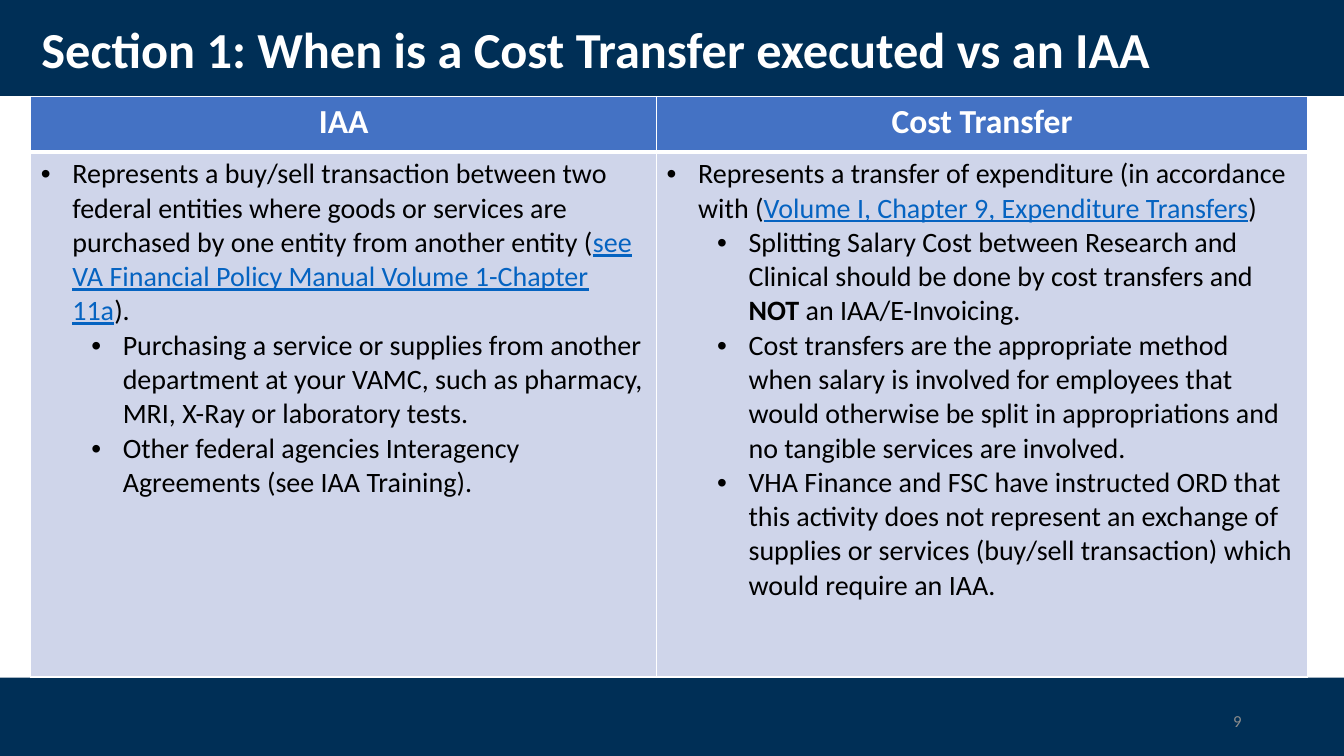
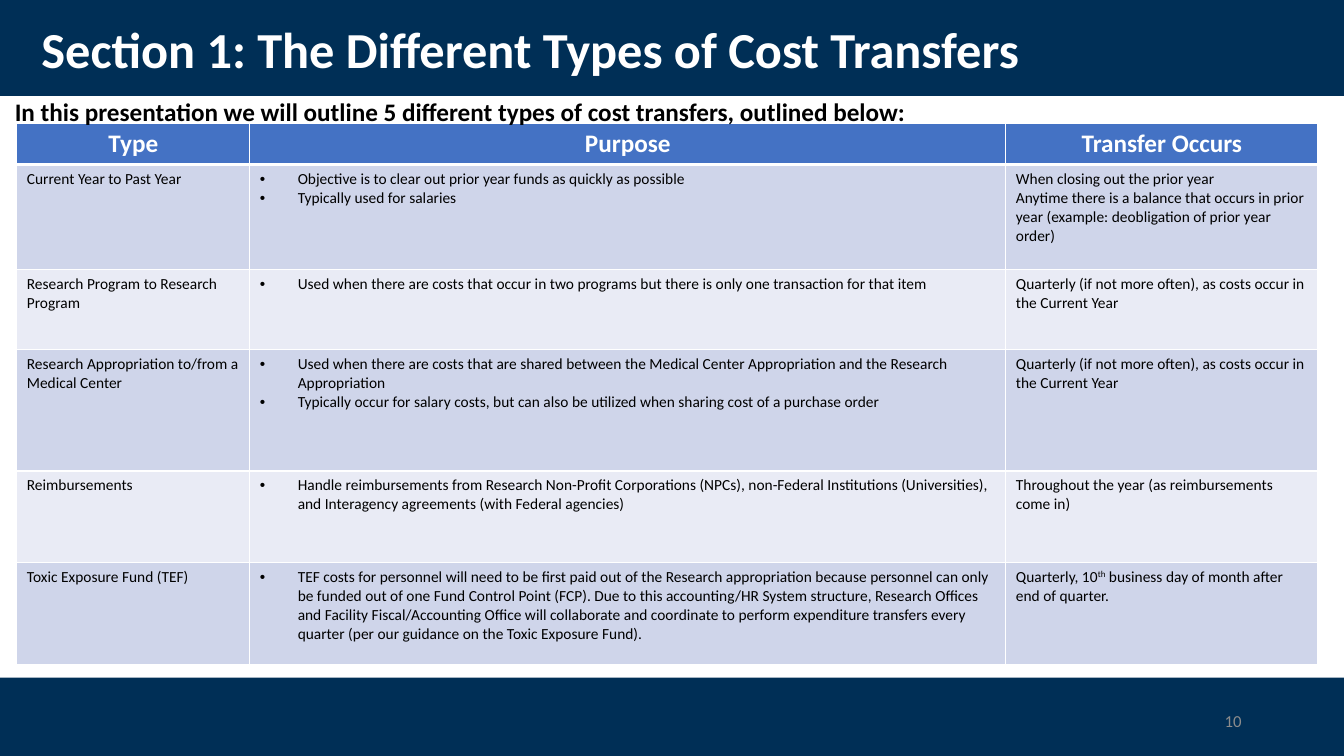
from dataclasses import dataclass

import lxml.etree
import pptx
import pptx.dml.color
import pptx.enum.shapes
import pptx.enum.text
import pptx.oxml.ns
import pptx.util

Pt = pptx.util.Pt
Align = pptx.enum.text.PP_ALIGN
Anchor = pptx.enum.text.MSO_ANCHOR


@dataclass(frozen=True)
class Theme:
    font: str = "Calibri"
    navy: str = "002F56"
    blue: str = "4472C4"
    bands: tuple = ("CFD5EA", "E9EBF5")
    white: str = "FFFFFF"
    black: str = "000000"
    gray: str = "8C8C8C"
    link: str = "0563C1"
    title_size: int = 36
    caption_size: int = 18
    number_size: int = 12


@dataclass(frozen=True)
class Bullet:
    spans: tuple | str
    level: int = 0


THEME = Theme()
WIDTH, HEIGHT = 960, 540
BANDS = [(0, 68.5), (484, HEIGHT - 484)]
CAPTION = "In this presentation we will outline 5 different types of cost transfers, outlined below:"

COMPARISON = {
    "title": "Section 1: When is a Cost Transfer executed vs an IAA",
    "number": "9",
    "left": 22, "top": 69,
    "columns": [447, 465], "heights": [39.6, 375],
    "header_size": 24, "body_size": 20,
    "hang": 22.5, "step": 36,
    "header": ["IAA", "Cost Transfer"],
    "rows": [[
        [
            Bullet((
                "Represents a buy/sell transaction between two federal entities where goods or services are purchased by one entity from another entity (",
                ("see VA Financial Policy Manual Volume 1-Chapter 11a", "link"),
                ").",
            )),
            Bullet("Purchasing a service or supplies from another department at your VAMC, such as pharmacy, MRI, X-Ray or laboratory tests.", 1),
            Bullet("Other federal agencies Interagency Agreements (see IAA Training).", 1),
        ],
        [
            Bullet((
                "Represents a transfer of expenditure (in accordance with (",
                ("Volume I, Chapter 9, Expenditure Transfers", "link"),
                ")",
            )),
            Bullet((
                "Splitting Salary Cost between Research and Clinical should be done by cost transfers and ",
                ("NOT", "bold"),
                " an IAA/E-Invoicing.",
            ), 1),
            Bullet("Cost transfers are the appropriate method when salary is involved for employees that would otherwise be split in appropriations and no tangible services are involved.", 1),
            Bullet("VHA Finance and FSC have instructed ORD that this activity does not represent an exchange of supplies or services (buy/sell transaction) which would require an IAA.", 1),
        ],
    ]],
}

TYPES = {
    "title": "Section 1: The Different Types of Cost Transfers",
    "number": "10",
    "left": 12, "top": 88,
    "columns": [166.5, 540, 223], "heights": [29.5, 75, 57.5, 86.5, 65.5, 73],
    "header_size": 18, "body_size": 11,
    "hang": 27, "step": 0,
    "header": ["Type", "Purpose", "Transfer Occurs"],
    "rows": [
        [
            ["Current Year to Past Year"],
            [
                Bullet("Objective is to clear out prior year funds as quickly as possible"),
                Bullet("Typically used for salaries"),
            ],
            [
                "When closing out the prior year",
                "Anytime there is a balance that occurs in prior year (example: deobligation of prior year order)",
            ],
        ],
        [
            ["Research Program to Research Program"],
            [Bullet("Used when there are costs that occur in two programs but there is only one transaction for that item")],
            ["Quarterly (if not more often), as costs occur in the Current Year"],
        ],
        [
            ["Research Appropriation to/from a Medical Center"],
            [
                Bullet("Used when there are costs that are shared between the Medical Center Appropriation and the Research Appropriation"),
                Bullet("Typically occur for salary costs, but can also be utilized when sharing cost of a purchase order"),
            ],
            ["Quarterly (if not more often), as costs occur in the Current Year"],
        ],
        [
            ["Reimbursements"],
            [Bullet("Handle reimbursements from Research Non-Profit Corporations (NPCs), non-Federal Institutions (Universities), and Interagency agreements (with Federal agencies)")],
            ["Throughout the year (as reimbursements come in)"],
        ],
        [
            ["Toxic Exposure Fund (TEF)"],
            [Bullet("TEF costs for personnel will need to be first paid out of the Research appropriation because personnel can only be funded out of one Fund Control Point (FCP). Due to this accounting/HR System structure, Research Offices and Facility Fiscal/Accounting Office will collaborate and coordinate to perform expenditure transfers every quarter (per our guidance on the Toxic Exposure Fund).")],
            [("Quarterly, 10", ("th", "superscript"), " business day of month after end of quarter.")],
        ],
    ],
}


def rgb(color):
    return pptx.dml.color.RGBColor.from_string(color)


def add_child(parent, tag, **attributes):
    return lxml.etree.SubElement(parent, pptx.oxml.ns.qn(tag), attributes)


def style_paragraph(paragraph, size, color, bold=False, align=Align.LEFT):
    paragraph.alignment = align
    font = paragraph.font
    font.name, font.size, font.bold = THEME.font, Pt(size), bold
    font.color.rgb = rgb(color)


def add_spans(paragraph, spans):
    for item in (spans,) if isinstance(spans, str) else spans:
        text, kind = (item, None) if isinstance(item, str) else item
        span = paragraph.add_run()
        span.text = text
        if kind == "link":
            span.font.underline = True
            span.font.color.rgb = rgb(THEME.link)
        elif kind == "bold":
            span.font.bold = True
        elif kind == "superscript":
            span._r.get_or_add_rPr().set("baseline", "30000")


def add_text(page, text, place, size, color, bold=False, align=Align.LEFT, anchor=Anchor.MIDDLE, spacing=None):
    box = page.shapes.add_textbox(*map(Pt, place))
    frame = box.text_frame
    frame.word_wrap = True
    frame.vertical_anchor = anchor
    paragraph = frame.paragraphs[0]
    add_spans(paragraph, text)
    style_paragraph(paragraph, size, color, bold, align)
    paragraph.line_spacing = spacing


def add_bullet(paragraph, margin, hang):
    properties = paragraph._p.get_or_add_pPr()
    properties.set("marL", str(Pt(margin)))
    properties.set("indent", str(-Pt(hang)))
    add_child(properties, "a:buFont", typeface="Arial")
    add_child(properties, "a:buChar", char="•")


def set_borders(cell, top, bottom):
    properties = cell._tc.get_or_add_tcPr()
    for index, (side, width) in enumerate(zip("LRTB", (1, 1, top, bottom))):
        line = add_child(properties, f"a:ln{side}", w=str(Pt(width)))
        add_child(add_child(line, "a:solidFill"), "a:srgbClr", val=THEME.white)
        properties.insert(index, line)


def fill_cell(cell, items, fill, row, table):
    cell.fill.solid()
    cell.fill.fore_color.rgb = rgb(fill)
    set_borders(cell, 3 if row == 1 else 1, 3 if row == 0 else 1)
    frame = cell.text_frame
    for index, item in enumerate(items):
        paragraph = frame.add_paragraph() if index else frame.paragraphs[0]
        if isinstance(item, Bullet):
            paragraph.level = item.level
            add_bullet(paragraph, table["hang"] + item.level * table["step"], table["hang"])
            item = item.spans
        add_spans(paragraph, item)
        if row == 0:
            style_paragraph(paragraph, table["header_size"], THEME.white, True, Align.CENTER)
        else:
            style_paragraph(paragraph, table["body_size"], THEME.black)


def add_grid(page, table):
    columns, heights = table["columns"], table["heights"]
    place = (table["left"], table["top"], sum(columns), sum(heights))
    grid = page.shapes.add_table(len(heights), len(columns), *map(Pt, place)).table
    for column, width in zip(grid.columns, columns):
        column.width = Pt(width)
    content = [[[label] for label in table["header"]], *table["rows"]]
    for row, (cells, height) in enumerate(zip(content, heights)):
        grid.rows[row].height = Pt(height)
        fill = THEME.bands[(row - 1) % 2] if row else THEME.blue
        for column, items in enumerate(cells):
            fill_cell(grid.cell(row, column), items, fill, row, table)


def add_page(deck, content):
    page = deck.slides.add_slide(deck.slide_layouts[6])
    for top, height in BANDS:
        band = page.shapes.add_shape(
            pptx.enum.shapes.MSO_SHAPE.RECTANGLE, Pt(0), Pt(top), Pt(WIDTH), Pt(height))
        band.shadow.inherit = False
        band.fill.solid()
        band.fill.fore_color.rgb = rgb(THEME.navy)
        band.line.fill.background()
    add_text(page, content["title"], (22.5, 13, 828, 49), THEME.title_size, THEME.white, True, spacing=0.9)
    add_grid(page, content)
    add_text(page, content["number"], (678, 500.5, 216, 29), THEME.number_size, THEME.gray, align=Align.RIGHT)
    return page


def main():
    deck = pptx.Presentation()
    deck.slide_width, deck.slide_height = Pt(WIDTH), Pt(HEIGHT)
    add_page(deck, COMPARISON)
    types_page = add_page(deck, TYPES)
    add_text(types_page, CAPTION, (3.5, 67.5, 828, 44), THEME.caption_size, THEME.black,
             True, anchor=Anchor.TOP, spacing=0.9)
    deck.save("out.pptx")


if __name__ == "__main__":
    main()
